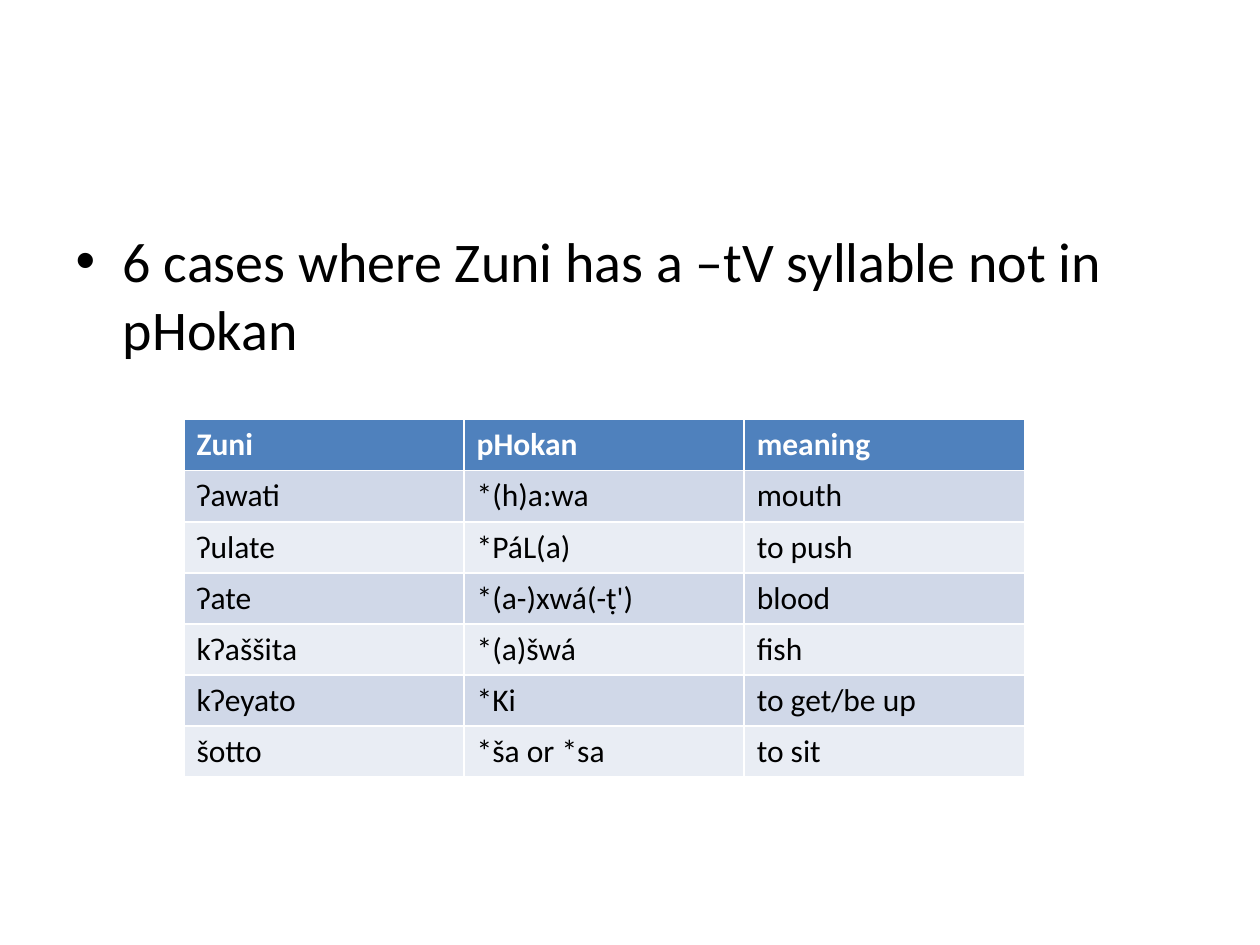
"""Build a slide listing Zuni words whose -tV syllable is missing in pHokan."""
import pptx
import pptx.dml.color
import pptx.util

RGBColor = pptx.dml.color.RGBColor
BLACK = RGBColor(0x00, 0x00, 0x00)
WHITE = RGBColor(0xFF, 0xFF, 0xFF)
HEADER_BLUE = RGBColor(0x4F, 0x81, 0xBD)
BAND_FILLS = [RGBColor(0xE9, 0xED, 0xF4), RGBColor(0xD0, 0xD8, 0xE8)]

ROWS = [
    ("Zuni", "pHokan", "meaning"),
    ("ʔawati", "*(h)a:wa", "mouth"),
    ("ʔulate", "*PáL(a)", "to push"),
    ("ʔate", "*(a-)xwá(-ṭ')", "blood"),
    ("kʔaššita", "*(a)šwá", "fish"),
    ("kʔeyato", "*Ki", "to get/be up"),
    ("šotto", "*ša or *sa", "to sit"),
]


def write_text(text_frame, text, font_format):
    text_frame.text = text
    font = text_frame.paragraphs[0].runs[0].font
    for name, value in font_format.items():
        if name == "color":
            font.color.rgb = value
        else:
            setattr(font, name, value)


presentation = pptx.Presentation()
presentation.slide_width = pptx.util.Inches(10)
presentation.slide_height = pptx.util.Inches(7.5)
slide = presentation.slides.add_slide(presentation.slide_layouts[1])

title = slide.shapes.title.element
title.getparent().remove(title)

body = slide.placeholders[1]
body_place = {"left": 0.5, "top": 1.75, "width": 9, "height": 4.95}
for name, inches in body_place.items():
    setattr(body, name, pptx.util.Inches(inches))
write_text(
    body.text_frame,
    "6 cases where Zuni has a –tV syllable not in pHokan",
    {"name": "Calibri", "size": pptx.util.Pt(32), "color": BLACK},
)

column_width = pptx.util.Inches(6.67 / 3)
row_height = pptx.util.Inches(2.84 / len(ROWS))
table = slide.shapes.add_table(
    len(ROWS), 3, pptx.util.Inches(1.46), pptx.util.Inches(3.33),
    column_width * 3, row_height * len(ROWS),
).table

for row_index, words in enumerate(ROWS):
    is_header = row_index == 0
    cell_font = {
        "name": "Calibri",
        "size": pptx.util.Pt(18),
        "bold": is_header,
        "color": WHITE if is_header else BLACK,
    }
    for column_index, word in enumerate(words):
        cell = table.cell(row_index, column_index)
        cell.fill.solid()
        cell.fill.fore_color.rgb = HEADER_BLUE if is_header else BAND_FILLS[row_index % 2]
        write_text(cell.text_frame, word, cell_font)

presentation.save("out.pptx")
